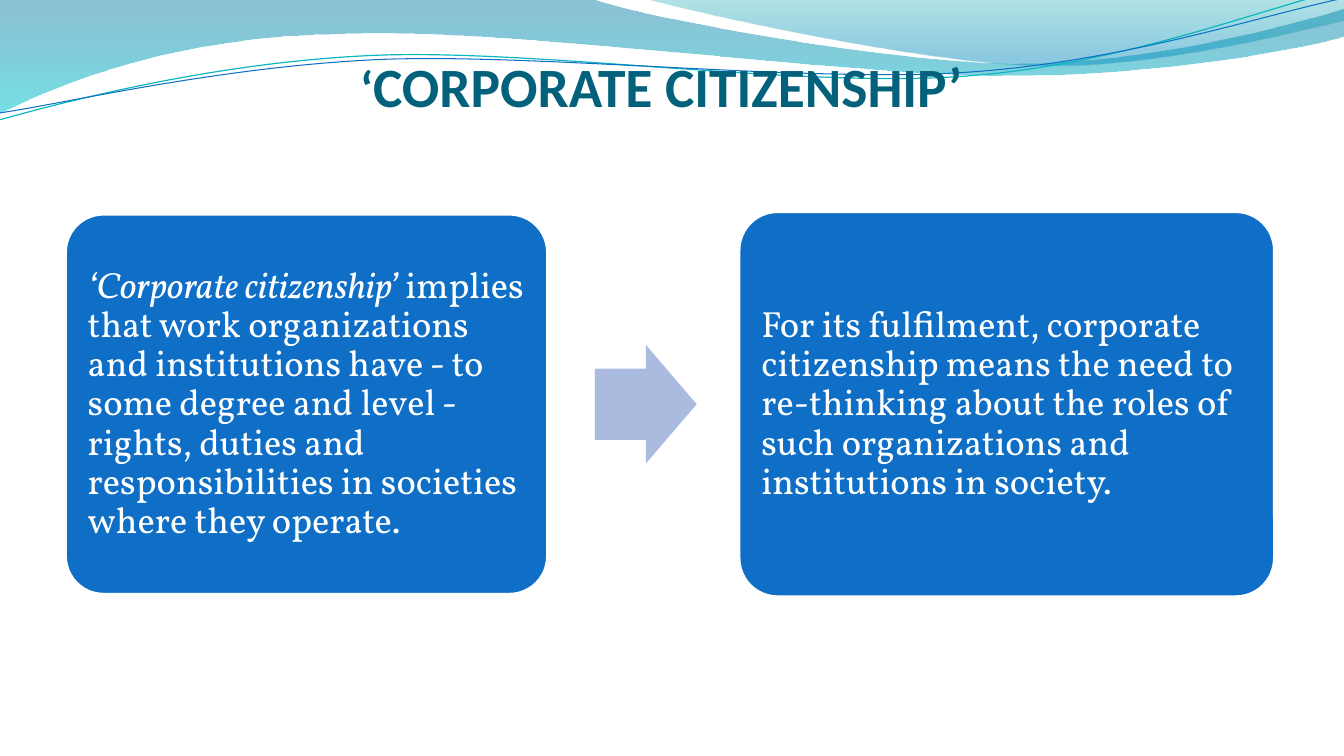
from dataclasses import dataclass

from lxml import etree
from pptx import Presentation
from pptx.dml.color import RGBColor
from pptx.enum.shapes import MSO_SHAPE
from pptx.enum.text import MSO_ANCHOR, PP_ALIGN
from pptx.oxml import parse_xml
from pptx.util import Inches, Pt

ROUND, ARROW = MSO_SHAPE.ROUNDED_RECTANGLE, MSO_SHAPE.RIGHT_ARROW
MIDDLE, BOTTOM = MSO_ANCHOR.MIDDLE, MSO_ANCHOR.BOTTOM
LEFT, CENTER = PP_ALIGN.LEFT, PP_ALIGN.CENTER
NS = "http://schemas.openxmlformats.org/drawingml/2006/main"


@dataclass(frozen=True)
class Theme:
    blue: str = "0F6FC6"
    teal: str = "0AB8BF"
    title: str = "04617B"
    arrow: str = "ABBBDF"
    white: str = "FFFFFF"
    head: str = "Calibri"
    body: str = "Vollkorn"
    quote_size: float = 36
    head_size: float = 39.6
    body_size: float = 26
    # gradient stops: place %, colour, opacity %
    deep: tuple = ((0, "0074A1", 45), (100, "00C6CF", 55))
    pale: tuple = ((0, "00A1A9", 30), (80, "008BBF", 45))


THEME = Theme()

# Each part of an outline is a line (x, y) or a curve (x1, y1, x2, y2, x, y).
BAND = [(0, 0), (5.87, -0.01), (6.34, 0.17, 8.85, 0.63, 10.11, 0.63),
        (11.38, 0.63, 12.78, 0.26, 13.33, 0.09), (13.35, 0.36),
        (13.11, 0.44, 11.6, 0.76, 9.94, 0.75),
        (8.29, 0.75, 5.09, 0.28, 3.43, 0.34),
        (1.72, 0.36, 0.61, 0.83, -0.01, 1.13)]
CREST = [(6.39, -0.01), (6.79, 0.11, 9.09, 0.62, 10.25, 0.65),
         (11.41, 0.69, 12.82, 0.32, 13.33, 0.21), (13.33, 0)]
TEAL_WAVE = [(-0.01, 1.19), (0.64, 1.01, 2.11, 0.62, 3.69, 0.55),
             (5.27, 0.48, 7.9, 0.87, 9.5, 0.76),
             (11.1, 0.66, 12.52, 0.08, 13.31, -0.1)]
BLUE_WAVE = [(0, 1.12), (0.63, 1.03, 2.18, 0.66, 3.78, 0.59),
             (5.37, 0.53, 7.96, 0.82, 9.55, 0.72),
             (11.15, 0.62, 12.55, 0.14, 13.34, -0.02)]


def rgb(code):
    return RGBColor.from_string(code)


def outline(slide, parts, close):
    """Draw the parts as straight lines, then bend each curve's three lines into one."""
    points = [(Inches(part[i]), Inches(part[i + 1]))
              for part in parts for i in range(0, len(part), 2)]
    form = slide.shapes.build_freeform(*points[0])
    form.add_line_segments(points[1:], close=close)
    shape = form.convert_to_shape()
    shape.shadow.inherit = False
    lines = iter(list(shape.element.spPr.iter(f"{{{NS}}}lnTo")))
    for part in parts[1:]:
        line = next(lines)
        if len(part) == 6:
            curve = etree.Element(f"{{{NS}}}cubicBezTo")
            line.addprevious(curve)
            for piece in (line, next(lines), next(lines)):
                curve.append(piece[0])
                piece.getparent().remove(piece)
    return shape


def add_area(slide, parts, stops):
    """Draw a closed outline with a see-through fade from top to bottom."""
    shape = outline(slide, parts, True)
    shape.line.fill.background()
    shape.fill.background()
    fade = parse_xml(f'<a:gradFill xmlns:a="{NS}" rotWithShape="1"><a:gsLst/>'
                     '<a:lin ang="5400000" scaled="0"/></a:gradFill>')
    for place, code, alpha in stops:
        stop = etree.SubElement(fade[0], f"{{{NS}}}gs", pos=str(place * 1000))
        color = etree.SubElement(stop, f"{{{NS}}}srgbClr", val=code)
        etree.SubElement(color, f"{{{NS}}}alpha", val=str(alpha * 1000))
    props = shape.element.spPr
    props.replace(props.find(f"{{{NS}}}noFill"), fade)


def add_wave(slide, parts, code, width):
    shape = outline(slide, parts, False)
    shape.fill.background()
    shape.line.color.rgb = rgb(code)
    shape.line.width = Pt(width)


def add_banner(slide):
    add_area(slide, BAND, THEME.deep)
    add_area(slide, CREST, THEME.pale)
    add_wave(slide, TEAL_WAVE, THEME.teal, 0.85)
    add_wave(slide, BLUE_WAVE, THEME.blue, 0.75)


def set_frame(frame, insets, anchor, align):
    frame.word_wrap = True
    frame.vertical_anchor = anchor
    (frame.margin_left, frame.margin_top,
     frame.margin_right, frame.margin_bottom) = map(Inches, insets)
    para = frame.paragraphs[0]
    para.alignment = align
    return para


def add_run(para, text, font, size, code, bold=False, italic=False):
    run = para.add_run()
    run.text = text
    run.font.name, run.font.size = font, Pt(size)
    run.font.color.rgb = rgb(code)
    run.font.bold, run.font.italic = bold, italic


def add_title(slide, box):
    shape = slide.shapes.add_textbox(*map(Inches, box))
    para = set_frame(shape.text_frame, (0, 0.05, 0, 0.54), BOTTOM, CENTER)
    for text, size in (("‘", THEME.quote_size),
                       ("CORPORATE CITIZENSHIP’", THEME.head_size)):
        add_run(para, text, THEME.head, size, THEME.title, bold=True)


def add_block(slide, kind, box, code, adjust):
    shape = slide.shapes.add_shape(kind, *map(Inches, box))
    for index, value in enumerate(adjust):
        shape.adjustments[index] = value
    shape.shadow.inherit = False
    shape.fill.solid()
    shape.fill.fore_color.rgb = rgb(code)
    shape.line.fill.background()
    return shape


def add_card(slide, box, runs):
    card = add_block(slide, ROUND, box, THEME.blue, [0.1])
    card.line.color.rgb = rgb(THEME.white)
    card.line.width = Pt(2)
    para = set_frame(card.text_frame, [0.11] * 4, MIDDLE, LEFT)
    para.line_spacing = 0.9
    for text, italic in runs:
        add_run(para, text, THEME.body, THEME.body_size, THEME.white, italic=italic)


def add_flow(slide, box):
    """Place two cards at the ends of the box and an arrow between them."""
    left, top, width, height = box
    mid = top + height / 2
    first, last, tall, arrow = 4.78, 5.31, 3.77, 1.18
    add_card(slide, (left, mid - tall / 2, first, tall), [
        ("‘Corporate citizenship’ ", True),
        ("implies that work organizations and institutions have - to some "
         "degree and level - rights, duties and responsibilities in societies "
         "where they operate.", False)])
    add_block(slide, ARROW, (left + first + 0.47, mid - arrow / 2, 1.01, arrow),
              THEME.arrow, [0.6, 0.5])
    add_card(slide, (left + width - last, top, last, height), [
        ("For its fulfilment, corporate citizenship means the need to "
         "re-thinking about the roles of such organizations and institutions "
         "in society.", False)])


def main():
    deck = Presentation()
    deck.slide_width, deck.slide_height = Inches(13.33), Inches(7.5)
    slide = deck.slides.add_slide(deck.slide_layouts[6])
    add_banner(slide)
    add_title(slide, (0.56, 0.42, 12, 1.3))
    add_flow(slide, (0.65, 2.1, 11.99, 3.82))
    deck.save("out.pptx")


if __name__ == "__main__":
    main()
